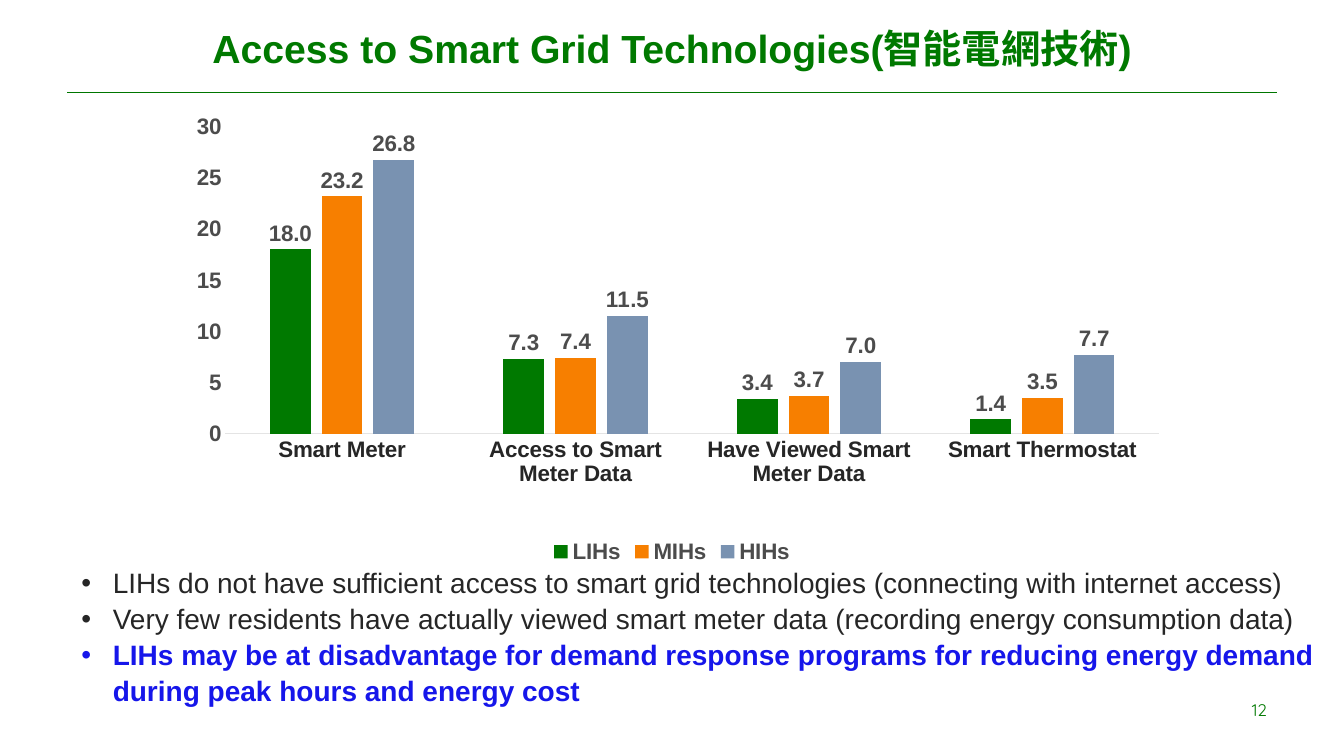
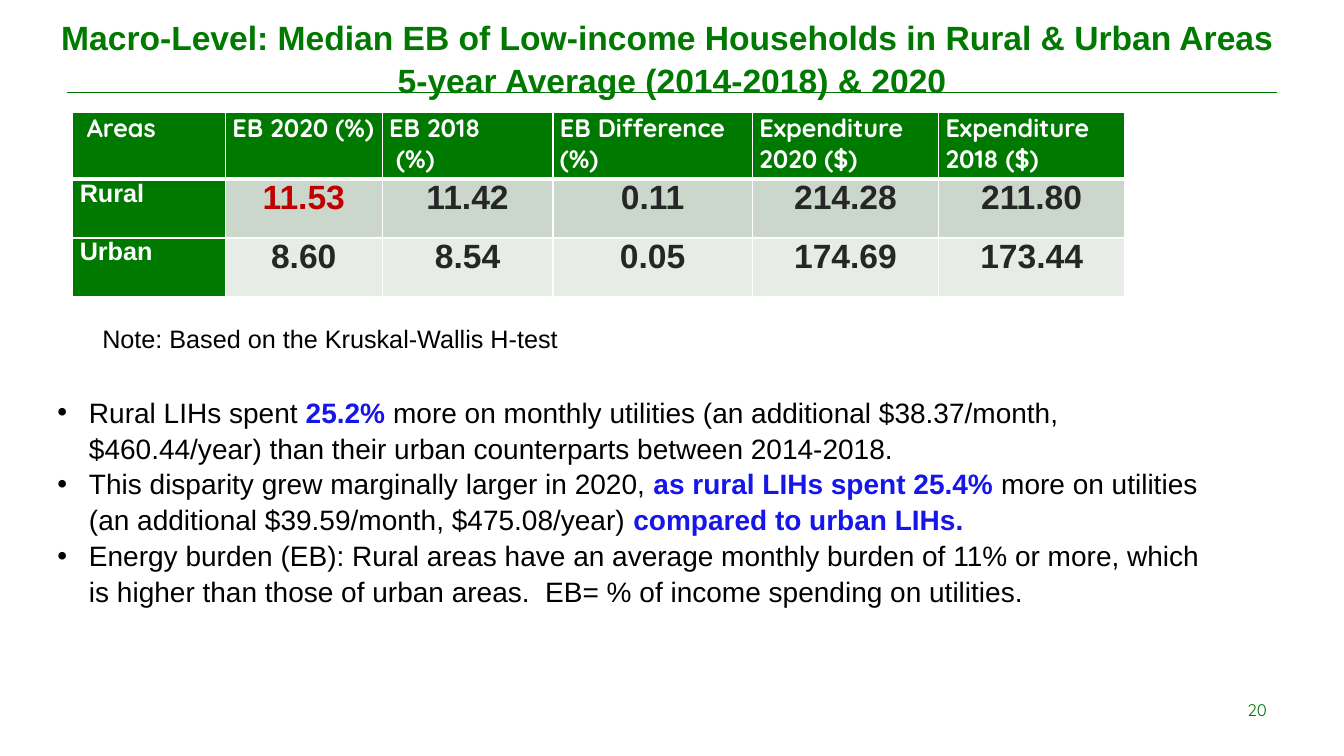
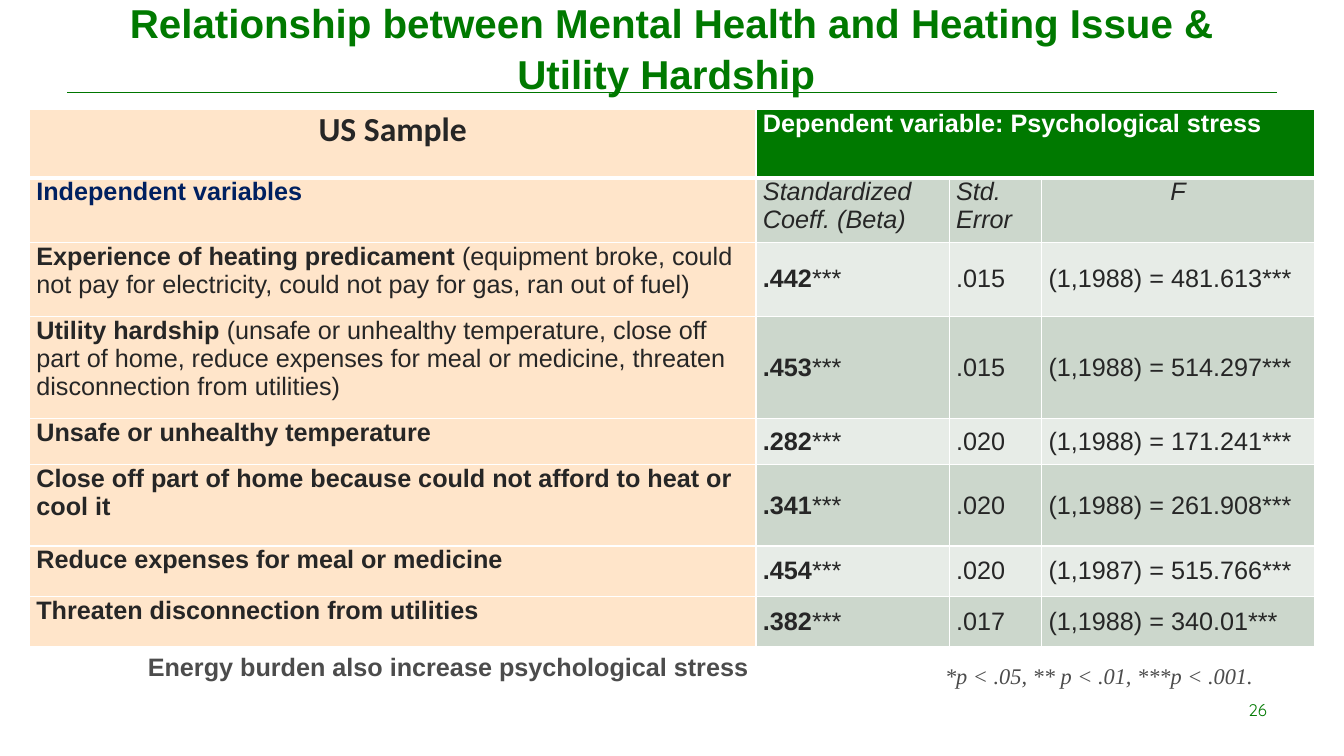
"""Builds three slides on smart grid access, energy burden and mental health."""
import pptx
import pptx.chart.data
import pptx.dml.color
import pptx.enum.chart
import pptx.enum.shapes
import pptx.enum.text
import pptx.oxml
import pptx.oxml.ns
import pptx.util

Pt = pptx.util.Pt
RGB = pptx.dml.color.RGBColor
ALIGN = pptx.enum.text.PP_ALIGN
ANCHOR = pptx.enum.text.MSO_ANCHOR
XL = pptx.enum.chart

GREEN = RGB(0x00, 0x79, 0x00)
RULE_GREEN = RGB(0x00, 0x76, 0x00)
ORANGE = RGB(0xF7, 0x7F, 0x00)
STEEL = RGB(0x79, 0x92, 0xB1)
BLUE = RGB(0x16, 0x16, 0xEA)
NAVY = RGB(0x00, 0x20, 0x60)
RED = RGB(0xC0, 0x00, 0x00)
BLACK = RGB(0x00, 0x00, 0x00)
DARK = RGB(0x26, 0x26, 0x26)
GREY = RGB(0x4C, 0x4C, 0x4C)
PALE_GREY = RGB(0xE4, 0xE4, 0xE4)
WHITE = RGB(0xFF, 0xFF, 0xFF)
PEACH = RGB(0xFF, 0xE5, 0xCA)
BANDS = RGB(0xCC, 0xD7, 0xCC), RGB(0xE7, 0xEC, 0xE7)

SPACING = 1.07
STRONG = {"bold": True, "color": BLUE}

ACCESS_TITLE = ["Access to Smart Grid Technologies(智能電網技術)"]
ACCESS_CATEGORIES = ["Smart Meter", "Access to Smart Meter Data",
                     "Have Viewed Smart Meter Data", "Smart Thermostat"]
ACCESS_SERIES = [
    ("LIHs", GREEN, (18, 7.3, 3.4, 1.4)),
    ("MIHs", ORANGE, (23.2, 7.4, 3.7, 3.5)),
    ("HIHs", STEEL, (26.8, 11.5, 7, 7.7)),
]
ACCESS_POINTS = [
    "LIHs do not have sufficient access to smart grid technologies (connecting with internet access)",
    "Very few residents have actually viewed smart meter data (recording energy consumption data)",
    [("LIHs may be at disadvantage for demand response programs for reducing energy demand "
      "during peak hours and energy cost", STRONG)],
]

BURDEN_TITLE = ["Macro-Level: Median EB of Low-income Households in Rural & Urban Areas ",
                "5-year Average (2014-2018) & 2020"]
BURDEN_COLS = [109, 112, 122, 142.5, 133, 133]
BURDEN_ROWS = [48, 42, 42]
BURDEN_HEADS = [[" Areas"], ["EB 2020 (%)"], ["EB 2018", " (%)"], ["EB Difference (%)"],
                ["Expenditure 2020 ($)"], ["Expenditure 2018 ($)"]]
BURDEN_DATA = [
    ("Rural", "11.53", "11.42", "0.11", "214.28", "211.80"),
    ("Urban", "8.60", "8.54", "0.05", "174.69", "173.44"),
]
BURDEN_HIGHLIGHT = "11.53"
BURDEN_NOTE = "Note: Based on the Kruskal-Wallis H-test"
BURDEN_POINTS = [
    ["Rural LIHs spent ", ("25.2% ", STRONG),
     "more on monthly utilities (an additional $38.37/month, $460.44/year) "
     "than their urban counterparts between 2014-2018."],
    ["This disparity grew marginally larger in 2020, ", ("as rural LIHs spent 25.4% ", STRONG),
     "more on utilities (an additional $39.59/month, $475.08/year) ",
     ("compared to urban LIHs.", STRONG)],
    "Energy burden (EB): Rural areas have an average monthly burden of 11% or more, which is "
    "higher than those of urban areas.  EB= % of income spending on utilities.",
]

STRESS_TITLE = ["Relationship between Mental Health and Heating Issue & Utility Hardship "]
STRESS_COLS = [519, 138, 66, 195]
STRESS_ROWS = [49, 46, 53, 73, 33, 58, 36, 36]
STRESS_HEADS = ["US Sample", "Dependent variable: Psychological stress"]
STRESS_SUBHEADS = ["Independent variables", "Standardized Coeff. (Beta)", "Std. Error", "F"]
STRESS_DATA = [
    ("Experience of heating predicament ",
     "(equipment broke, could not pay for electricity, could not pay for gas, ran out of fuel)",
     ".442", ".015", "(1,1988) = 481.613***"),
    ("Utility hardship ",
     "(unsafe or unhealthy temperature, close off part of home, reduce expenses for meal or "
     "medicine, threaten disconnection from utilities)",
     ".453", ".015", "(1,1988) = 514.297***"),
    ("Unsafe or unhealthy temperature", "", ".282", ".020", "(1,1988) = 171.241***"),
    ("Close off part of home because could not afford to heat or cool it", "",
     ".341", ".020", "(1,1988) = 261.908***"),
    ("Reduce expenses for meal or medicine", "", ".454", ".020", "(1,1987) = 515.766***"),
    ("Threaten disconnection from utilities", "", ".382", ".017", "(1,1988) = 340.01***"),
]
STRESS_REMARK = "Energy burden also increase psychological stress"
STRESS_LEGEND = "*p < .05, ** p < .01, ***p < .001."


def add_xml(parent, tag, **attrs):
    el = pptx.oxml.parse_xml(f"<a:{tag} {pptx.oxml.ns.nsdecls('a')}/>")
    for name, value in attrs.items():
        el.set(name, str(value))
    parent.append(el)
    return el


def set_font(font, size, color, name="Arial", bold=False, italic=False):
    font.size, font.name, font.bold, font.italic = Pt(size), name, bold, italic
    font.color.rgb = color


def write(tf, paragraphs, align=ALIGN.LEFT, spacing=None, bullet=False, **style):
    """Fills a text frame; a paragraph is a string or a list of strings and (text, style) pairs."""
    tf.word_wrap = True
    for i, runs in enumerate(paragraphs):
        p = tf.add_paragraph() if i else tf.paragraphs[0]
        if bullet:
            pPr = p._p.get_or_add_pPr()
            pPr.set("marL", str(Pt(22.5)))
            pPr.set("indent", str(-Pt(22.5)))
            add_xml(pPr, "buFont", typeface="Arial")
            add_xml(pPr, "buChar", char="•")
        p.alignment = align
        if spacing:
            p.line_spacing = spacing
        for run in [runs] if isinstance(runs, str) else runs:
            text, extra = (run, {}) if isinstance(run, str) else run
            r = p.add_run()
            r.text = text
            set_font(r.font, **{**style, **extra})


def add_text(s, box, paragraphs, anchor=ANCHOR.TOP, **style):
    tf = s.shapes.add_textbox(*map(Pt, box)).text_frame
    tf.vertical_anchor = anchor
    write(tf, paragraphs, **style)


def add_slide(prs, title, number, size, box=(48, 0, 864, 66)):
    s = prs.slides.add_slide(prs.slide_layouts[6])
    rule = s.shapes.add_connector(pptx.enum.shapes.MSO_CONNECTOR.STRAIGHT,
                                  Pt(48), Pt(66), Pt(912), Pt(66))
    rule.line.color.rgb, rule.line.width = RULE_GREEN, Pt(0.75)
    add_xml(rule._element.spPr, "effectLst")
    add_text(s, box, title, anchor=ANCHOR.MIDDLE, align=ALIGN.CENTER, spacing=SPACING,
             size=size, color=GREEN, bold=True)
    add_text(s, (210, 496, 702, 38), [str(number)], align=ALIGN.RIGHT,
             size=12, color=GREEN, name="Quicksand")
    return s


def add_table(s, left, top, cols, rows):
    table = s.shapes.add_table(len(rows), len(cols), Pt(left), Pt(top),
                               Pt(sum(cols)), Pt(sum(rows))).table
    table.first_row = table.horz_banding = False
    for col, width in zip(table.columns, cols):
        col.width = Pt(width)
    for row, height in zip(table.rows, rows):
        row.height = Pt(height)
    for i in range(len(rows)):
        for cell in table.rows[i].cells:
            cell.margin_left = cell.margin_right = Pt(5)
            cell.margin_top = cell.margin_bottom = 0
            tcPr = cell._tc.get_or_add_tcPr()
            widths = {"lnL": 1, "lnR": 1, "lnT": 3 if i == 1 else 1, "lnB": 3 if i == 0 else 1}
            for tag, width in widths.items():
                line = add_xml(tcPr, tag, w=Pt(width))
                add_xml(add_xml(line, "solidFill"), "srgbClr", val=WHITE)
    return table


def fill_cell(cell, fill, paragraphs, anchor=ANCHOR.TOP, **style):
    cell.fill.solid()
    cell.fill.fore_color.rgb = fill
    cell.vertical_anchor = anchor
    write(cell.text_frame, paragraphs, **style)


def add_access_chart(s):
    data = pptx.chart.data.CategoryChartData(number_format="General")
    data.categories = ACCESS_CATEGORIES
    for name, _, values in ACCESS_SERIES:
        data.add_series(name, values)
    chart = s.shapes.add_chart(XL.XL_CHART_TYPE.COLUMN_CLUSTERED, Pt(117.5), Pt(74),
                               Pt(725), Pt(332), data).chart
    bold_grey = {"size": 16, "color": GREY, "bold": True}
    set_font(chart.font, **bold_grey)
    chart.has_title = False
    chart.has_legend = True
    chart.legend.position = XL.XL_LEGEND_POSITION.BOTTOM
    chart.legend.include_in_layout = False
    set_font(chart.legend.font, **bold_grey)

    for axis, color in ((chart.category_axis, DARK), (chart.value_axis, GREY)):
        axis.major_tick_mark = axis.minor_tick_mark = XL.XL_TICK_MARK.NONE
        axis.has_major_gridlines = False
        set_font(axis.tick_labels.font, 16, color, bold=True)
    line = chart.category_axis.format.line
    line.color.rgb, line.width = PALE_GREY, Pt(0.75)
    axis = chart.value_axis
    axis.format.line.fill.background()
    axis.minimum_scale, axis.maximum_scale, axis.major_unit = 0, 30, 5

    plot = chart.plots[0]
    plot.gap_width, plot.overlap, plot.vary_by_categories = 219, -27, False
    for series, (_, color, _) in zip(plot.series, ACCESS_SERIES):
        series.format.fill.solid()
        series.format.fill.fore_color.rgb = color
        labels = series.data_labels
        labels.show_value = True
        labels.number_format, labels.number_format_is_linked = "#,##0.0", False
        labels.position = XL.XL_LABEL_POSITION.OUTSIDE_END
        set_font(labels.font, **bold_grey)

    area = chart._chartSpace.chart.plotArea
    for old in area.findall(pptx.oxml.ns.qn("c:layout")):
        area.remove(old)
    places = {"layoutTarget": "inner", "xMode": "edge", "yMode": "edge",
              "x": 0.06, "y": 0.05, "w": 0.92, "h": 0.66}
    inner = "".join(f'<c:{tag} val="{value}"/>' for tag, value in places.items())
    area.insert(0, pptx.oxml.parse_xml(
        f"<c:layout {pptx.oxml.ns.nsdecls('c')}><c:manualLayout>{inner}"
        "</c:manualLayout></c:layout>"))


def build_access(prs):
    s = add_slide(prs, ACCESS_TITLE, 12, 28)
    add_text(s, (51, 399, 909, 104), ACCESS_POINTS, bullet=True, spacing=SPACING,
             size=20, color=DARK)
    add_access_chart(s)


def build_burden(prs):
    s = add_slide(prs, BURDEN_TITLE, 20, 24, box=(30, 8, 900, 66))
    table = add_table(s, 52, 80, BURDEN_COLS, BURDEN_ROWS)
    for cell, head in zip(table.rows[0].cells, BURDEN_HEADS):
        fill_cell(cell, GREEN, head, size=18, color=WHITE, name="Quicksand", bold=True)
    for i, (area, *values) in enumerate(BURDEN_DATA):
        first, *others = table.rows[i + 1].cells
        fill_cell(first, GREEN, [area], size=18, color=WHITE, bold=True)
        for cell, value in zip(others, values):
            fill_cell(cell, BANDS[i % 2], [value], align=ALIGN.CENTER, size=24, bold=True,
                      color=RED if value == BURDEN_HIGHLIGHT else DARK)
    add_text(s, (34, 277, 844.5, 153), BURDEN_POINTS, bullet=True, spacing=SPACING,
             size=20, color=BLACK)
    add_text(s, (66, 227.5, 360, 29), [BURDEN_NOTE], size=18, color=BLACK)


def build_stress(prs):
    s = add_slide(prs, STRESS_TITLE, 26, 28.8)
    table = add_table(s, 21, 78, STRESS_COLS, STRESS_ROWS)
    table.cell(0, 1).merge(table.cell(0, 3))
    fill_cell(table.cell(0, 0), PEACH, STRESS_HEADS[:1], align=ALIGN.CENTER,
              size=24, color=DARK, name="Calibri", bold=True)
    fill_cell(table.cell(0, 1), GREEN, STRESS_HEADS[1:], size=18, color=WHITE, bold=True)
    for j, head in enumerate(STRESS_SUBHEADS):
        fill_cell(table.cell(1, j), BANDS[0] if j else PEACH, [head],
                  align=ALIGN.CENTER if j == 3 else ALIGN.LEFT, size=18,
                  color=DARK if j else NAVY, bold=j == 0, italic=j > 0)
    for i, (name, detail, beta, error, f_value) in enumerate(STRESS_DATA, 2):
        label = [(name, {"bold": True})] + ([detail] if detail else [])
        texts = [label, [(beta, {"bold": True}), "***"], error, f_value]
        for j, text in enumerate(texts):
            fill_cell(table.cell(i, j), BANDS[(i - 1) % 2] if j else PEACH, [text],
                      anchor=ANCHOR.MIDDLE if j else ANCHOR.TOP, size=18, color=DARK)
    add_text(s, (668, 469.5, 246, 27), [STRESS_LEGEND], align=ALIGN.JUSTIFY,
             size=16, color=GREY, name="Times New Roman", italic=True)
    add_text(s, (98.5, 462, 459, 29), [STRESS_REMARK], size=18, color=GREY, bold=True)


def main():
    prs = pptx.Presentation()
    prs.slide_width, prs.slide_height = Pt(960), Pt(540)
    build_access(prs)
    build_burden(prs)
    build_stress(prs)
    prs.save("out.pptx")


if __name__ == "__main__":
    main()
